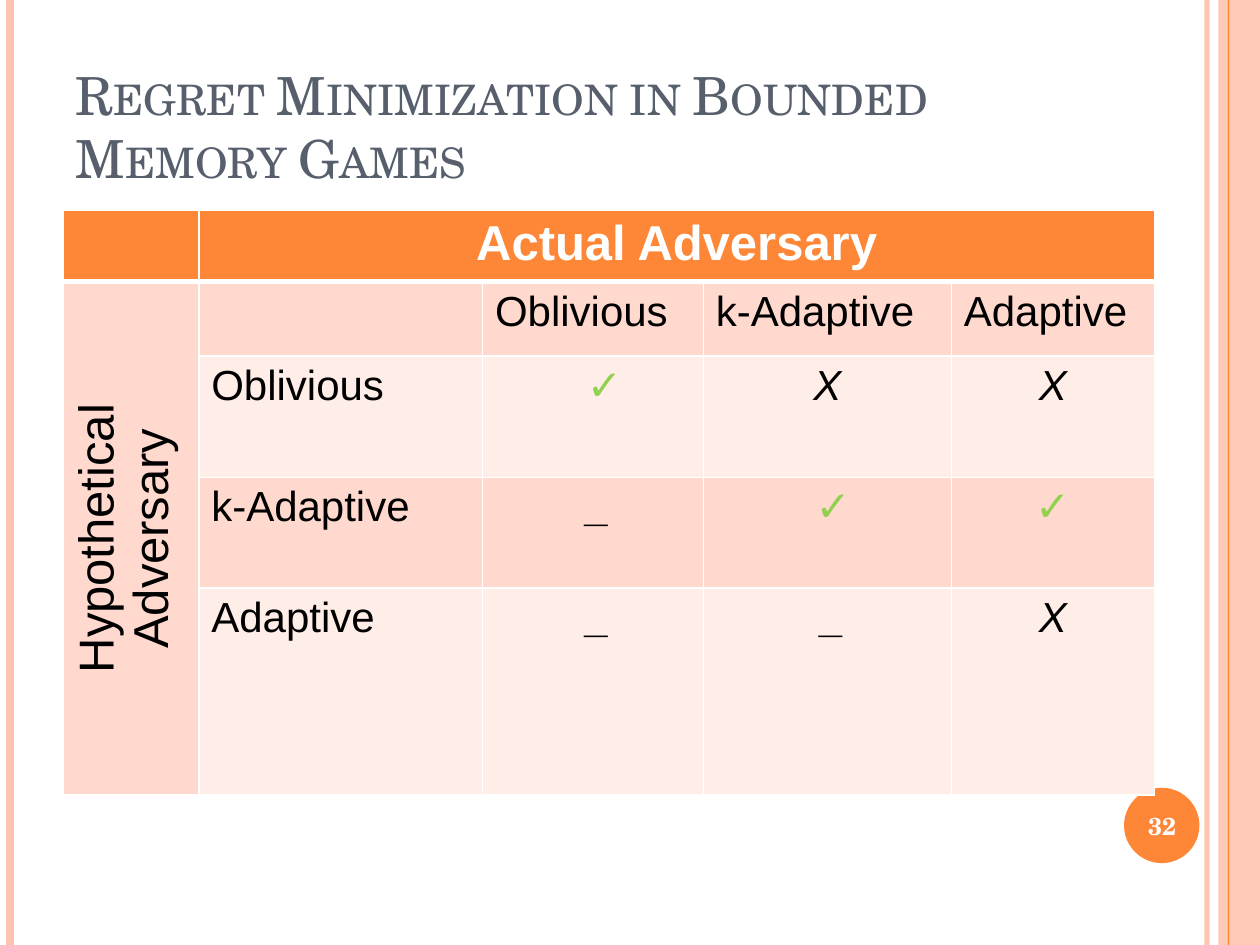
from dataclasses import dataclass

from lxml import etree
from pptx import Presentation
from pptx.dml.color import RGBColor
from pptx.enum.shapes import MSO_CONNECTOR, MSO_SHAPE
from pptx.enum.text import MSO_ANCHOR, MSO_AUTO_SIZE, PP_ALIGN
from pptx.oxml.ns import qn
from pptx.util import Cm, Pt

STRAIGHT = MSO_CONNECTOR.STRAIGHT
RECTANGLE, OVAL = MSO_SHAPE.RECTANGLE, MSO_SHAPE.OVAL
BOTTOM, MIDDLE = MSO_ANCHOR.BOTTOM, MSO_ANCHOR.MIDDLE
LEFT, CENTER = PP_ALIGN.LEFT, PP_ALIGN.CENTER
NO_AUTOFIT = MSO_AUTO_SIZE.NONE
TITLE_ONLY = 5
SLIDE_WIDTH, SLIDE_HEIGHT = 25.4, 19.05

COLUMN_WIDTHS = (2.74, 5.72, 4.45, 5.0, 4.09)
ROW_HEIGHTS = (1.38, 1.5, 2.44, 2.23, 4.18)
ADVERSARIES = ("Oblivious", "k-Adaptive", "Adaptive")
CHECK, CROSS, BLANK = "✓", "X", "_"
RESULTS = (
    ((CHECK, 0.47), (CROSS, 0), (CROSS, 0)),
    ((BLANK, 0.24), (CHECK, 0.24), (CHECK, 0)),
    ((BLANK, 0.24), (BLANK, 0.24), (CROSS, 0)),
)


@dataclass(frozen=True)
class Theme:
    """Colours, fonts and type sizes of the slide."""
    accent: str = "FE8637"
    soft: str = "FEC3AE"
    heading: str = "575F6D"
    white: str = "FFFFFF"
    ink: str = "000000"
    check: str = "92D050"
    bands: tuple = ("FFD9CE", "FFEDE8")
    serif: str = "TeX Gyre Schola"
    sans: str = "Arial"
    title_size: int = 30
    header_size: int = 28
    body_size: int = 24
    number_size: int = 14


class SlideBuilder:
    """Holds the theme and the current slide and adds each kind of element."""

    def __init__(self, slide, theme):
        self.slide = slide
        self.theme = theme

    def add_run(self, paragraph, text, font, size, color, bold=False, italic=False):
        run = paragraph.add_run()
        run.text = text
        run.font.name = font
        run.font.size = Pt(size)
        run.font.bold = bold
        run.font.italic = italic
        run.font.color.rgb = RGBColor.from_string(color)
        return run

    def set_alpha(self, element, percent):
        color = element.find(".//" + qn("a:srgbClr"))
        etree.SubElement(color, qn("a:alpha")).set("val", str(percent * 1000))

    def add_title(self, text, left, top, width, height):
        title = self.slide.shapes.title
        title.left, title.top = Cm(left), Cm(top)
        title.width, title.height = Cm(width), Cm(height)
        frame = title.text_frame
        frame.auto_size = NO_AUTOFIT
        frame.vertical_anchor = BOTTOM
        paragraph = frame.paragraphs[0]
        paragraph.alignment = LEFT
        run = self.add_run(paragraph, text, self.theme.serif,
                           self.theme.title_size, self.theme.heading)
        run.font._element.set("cap", "small")

    def add_vertical_line(self, x, color, weight, opacity=100):
        line = self.slide.shapes.add_connector(
            STRAIGHT, Cm(x), Cm(0), Cm(x), Cm(SLIDE_HEIGHT))
        line.line.color.rgb = RGBColor.from_string(color)
        line.line.width = Pt(weight)
        properties = line._element.spPr
        if opacity < 100:
            self.set_alpha(properties, opacity)
        etree.SubElement(properties, qn("a:effectLst"))

    def add_shape(self, kind, left, top, width, height, color, opacity=100):
        shape = self.slide.shapes.add_shape(
            kind, Cm(left), Cm(top), Cm(width), Cm(height))
        shape.shadow.inherit = False
        shape.fill.solid()
        shape.fill.fore_color.rgb = RGBColor.from_string(color)
        shape.line.fill.background()
        if opacity < 100:
            self.set_alpha(shape._element.spPr, opacity)

    def add_number(self, text, left, top, width, height):
        box = self.slide.shapes.add_textbox(Cm(left), Cm(top), Cm(width), Cm(height))
        frame = box.text_frame
        frame.word_wrap = True
        frame.vertical_anchor = MIDDLE
        paragraph = frame.paragraphs[0]
        paragraph.alignment = CENTER
        self.add_run(paragraph, text, self.theme.serif, self.theme.number_size,
                     self.theme.white, bold=True)

    def add_table(self, left, top):
        shape = self.slide.shapes.add_table(
            len(ROW_HEIGHTS), len(COLUMN_WIDTHS), Cm(left), Cm(top),
            Cm(sum(COLUMN_WIDTHS)), Cm(sum(ROW_HEIGHTS)))
        table = shape.table
        for column, width in zip(table.columns, COLUMN_WIDTHS):
            column.width = Cm(width)
        for index, (row, height) in enumerate(zip(table.rows, ROW_HEIGHTS)):
            row.height = Cm(height)
            fill = self.theme.bands[(index - 1) % 2] if index else self.theme.accent
            for cell in row.cells:
                cell.fill.solid()
                cell.fill.fore_color.rgb = RGBColor.from_string(fill)
                self.set_borders(cell, top=3 if index == 1 else 1,
                                 bottom=1 if index else 3)
        table.cell(0, 1).merge(table.cell(0, 4))
        table.cell(1, 0).merge(table.cell(4, 0))
        return table

    def set_borders(self, cell, top, bottom):
        properties = cell._tc.get_or_add_tcPr()
        weights = (("a:lnL", 1), ("a:lnR", 1), ("a:lnT", top), ("a:lnB", bottom))
        for position, (tag, weight) in enumerate(weights):
            border = etree.Element(qn(tag), w=str(Pt(weight)))
            fill = etree.SubElement(border, qn("a:solidFill"))
            etree.SubElement(fill, qn("a:srgbClr")).set("val", self.theme.white)
            properties.insert(position, border)

    def write_cell(self, cell, text, size, color, alignment=LEFT, indent=0, **emphasis):
        cell.margin_left = Cm(0.25 + indent)
        paragraph = cell.text_frame.paragraphs[0]
        paragraph.alignment = alignment
        self.add_run(paragraph, text, self.theme.sans, size, color, **emphasis)

    def fill_table(self, table):
        theme = self.theme
        self.write_cell(table.cell(0, 1), "Actual Adversary", theme.header_size,
                        theme.white, CENTER, bold=True)
        side = table.cell(1, 0)
        self.write_cell(side, "Hypothetical Adversary", theme.header_size,
                        theme.ink, CENTER)
        side._tc.get_or_add_tcPr().set("vert", "vert270")
        for index, (name, results) in enumerate(zip(ADVERSARIES, RESULTS), start=2):
            for cell in (table.cell(1, index), table.cell(index, 1)):
                self.write_cell(cell, name, theme.body_size, theme.ink)
            for column, (mark, indent) in enumerate(results, start=2):
                color = theme.check if mark == CHECK else theme.ink
                self.write_cell(table.cell(index, column), mark, theme.body_size,
                                color, CENTER, indent, italic=True)


def main():
    presentation = Presentation()
    presentation.slide_width, presentation.slide_height = Cm(SLIDE_WIDTH), Cm(SLIDE_HEIGHT)
    slide = presentation.slides.add_slide(presentation.slide_layouts[TITLE_ONLY])
    theme = Theme()
    builder = SlideBuilder(slide, theme)
    builder.add_vertical_line(24.33, theme.soft, 3, opacity=93)
    builder.add_vertical_line(0.2, theme.soft, 4.5)
    builder.add_vertical_line(24.76, theme.accent, 1.5)
    builder.add_shape(RECTANGLE, 24.56, 0, 0.84, SLIDE_HEIGHT, theme.soft, opacity=87)
    builder.add_vertical_line(24.76, theme.accent, 0.75)
    builder.add_shape(OVAL, 22.66, 15.88, 1.52, 1.52, theme.accent)
    builder.add_title("Regret Minimization in Bounded Memory Games",
                      1.27, 0.76, 20.75, 3.18)
    builder.add_number("32", 22.58, 15.93, 1.7, 1.45)
    builder.fill_table(builder.add_table(1.27, 4.24))
    presentation.save("out.pptx")


if __name__ == "__main__":
    main()
